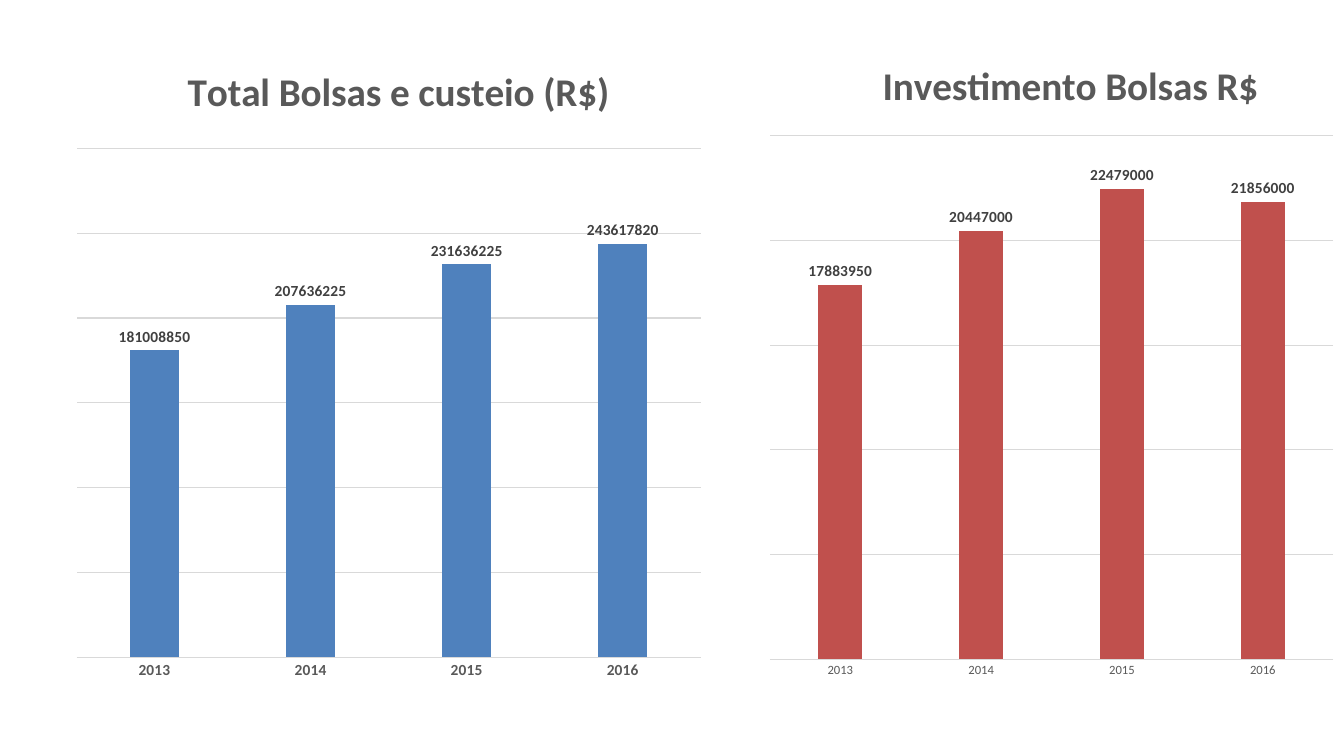
"""Two column charts of grant spending per year, side by side."""
from lxml import etree
from pptx import Presentation
from pptx.chart.data import CategoryChartData
from pptx.dml.color import RGBColor
from pptx.enum.chart import XL_CHART_TYPE, XL_LABEL_POSITION, XL_TICK_LABEL_POSITION, XL_TICK_MARK
from pptx.oxml.ns import qn
from pptx.util import Inches, Pt

COLUMN = XL_CHART_TYPE.COLUMN_CLUSTERED
OUTSIDE = XL_LABEL_POSITION.OUTSIDE_END
NO_TEXT = XL_TICK_LABEL_POSITION.NONE
NO_TICK = XL_TICK_MARK.NONE

FONT = "Calibri"
GREY, DARK, PALE = "595959", "404040", "D9D9D9"
YEARS = ["2013", "2014", "2015", "2016"]
CHARTS = [
    {"title": "Total Bolsas e custeio (R$)", "color": "4F81BD",
     "values": [181008850, 207636225, 231636225, 243617820],
     "box": (0.63, 0.45, 6.45, 6.39), "top": 300000000, "step": 50000000,
     "year": (11, True), "head": (0.18, 0.02), "plot": (0.02, 0.16, 0.96, 0.79)},
    {"title": "Investimento Bolsas R$", "color": "C0504D",
     "values": [17883950, 20447000, 22479000, 21856000],
     "box": (7.52, 0.45, 5.82, 6.41), "top": 25000000, "step": 5000000,
     "year": (9, False), "head": (0.2, 0.01), "plot": (0.02, 0.14, 0.96, 0.81)},
]


def rgb(code):
    return RGBColor.from_string(code)


def style(font, size, color, bold):
    font.name, font.size, font.bold = FONT, Pt(size), bold
    font.color.rgb = rgb(color)


def rule(line):
    line.color.rgb = rgb(PALE)
    line.width = Pt(0.75)


def place(part, shares, inner=False):
    for old in part.findall(qn("c:layout")):
        part.remove(old)
    layout = etree.Element(qn("c:layout"))
    manual = etree.SubElement(layout, qn("c:manualLayout"))
    marks = [("layoutTarget", "inner")] if inner else []
    marks += [("xMode", "edge"), ("yMode", "edge")]
    marks += zip("xywh", shares)
    for tag, val in marks:
        etree.SubElement(manual, qn("c:" + tag)).set("val", str(val))
    text = part.find(qn("c:tx"))
    if text is None:
        part.insert(0, layout)
    else:
        text.addnext(layout)


def draw(slide, item):
    data = CategoryChartData()
    data.categories = YEARS
    data.add_series(item["title"], item["values"])
    box = [Inches(n) for n in item["box"]]
    chart = slide.shapes.add_chart(COLUMN, *box, data).chart
    style(chart.font, 10, "000000", False)
    chart.has_legend = False

    frame = chart.chart_title.text_frame
    run = frame.paragraphs[0].add_run()
    run.text = item["title"]
    style(run.font, 28, GREY, True)
    chart.chart_title.include_in_layout = False
    space = chart._chartSpace.chart
    place(space.find(qn("c:title")), item["head"])
    place(space.plotArea, item["plot"], True)

    years = chart.category_axis
    years.major_tick_mark = years.minor_tick_mark = NO_TICK
    size, bold = item["year"]
    style(years.tick_labels.font, size, GREY, bold)
    rule(years.format.line)

    scale = chart.value_axis
    scale.minimum_scale, scale.maximum_scale = 0, item["top"]
    scale.major_unit = item["step"]
    scale.major_tick_mark = scale.minor_tick_mark = NO_TICK
    scale.tick_label_position = NO_TEXT
    scale.format.line.fill.background()
    rule(scale.major_gridlines.format.line)

    plot = chart.plots[0]
    plot.gap_width, plot.overlap = 219, -27
    plot.vary_by_categories = False
    fill = plot.series[0].format.fill
    fill.solid()
    fill.fore_color.rgb = rgb(item["color"])
    plot.has_data_labels = True
    labels = plot.data_labels
    labels.show_value = True
    labels.position = OUTSIDE
    labels.number_format, labels.number_format_is_linked = "0", False
    style(labels.font, 11, DARK, True)


def main():
    deck = Presentation()
    deck.slide_width, deck.slide_height = Inches(13.33), Inches(7.5)
    slide = deck.slides.add_slide(deck.slide_layouts[6])
    for item in CHARTS:
        draw(slide, item)
    deck.save("out.pptx")


if __name__ == "__main__":
    main()
